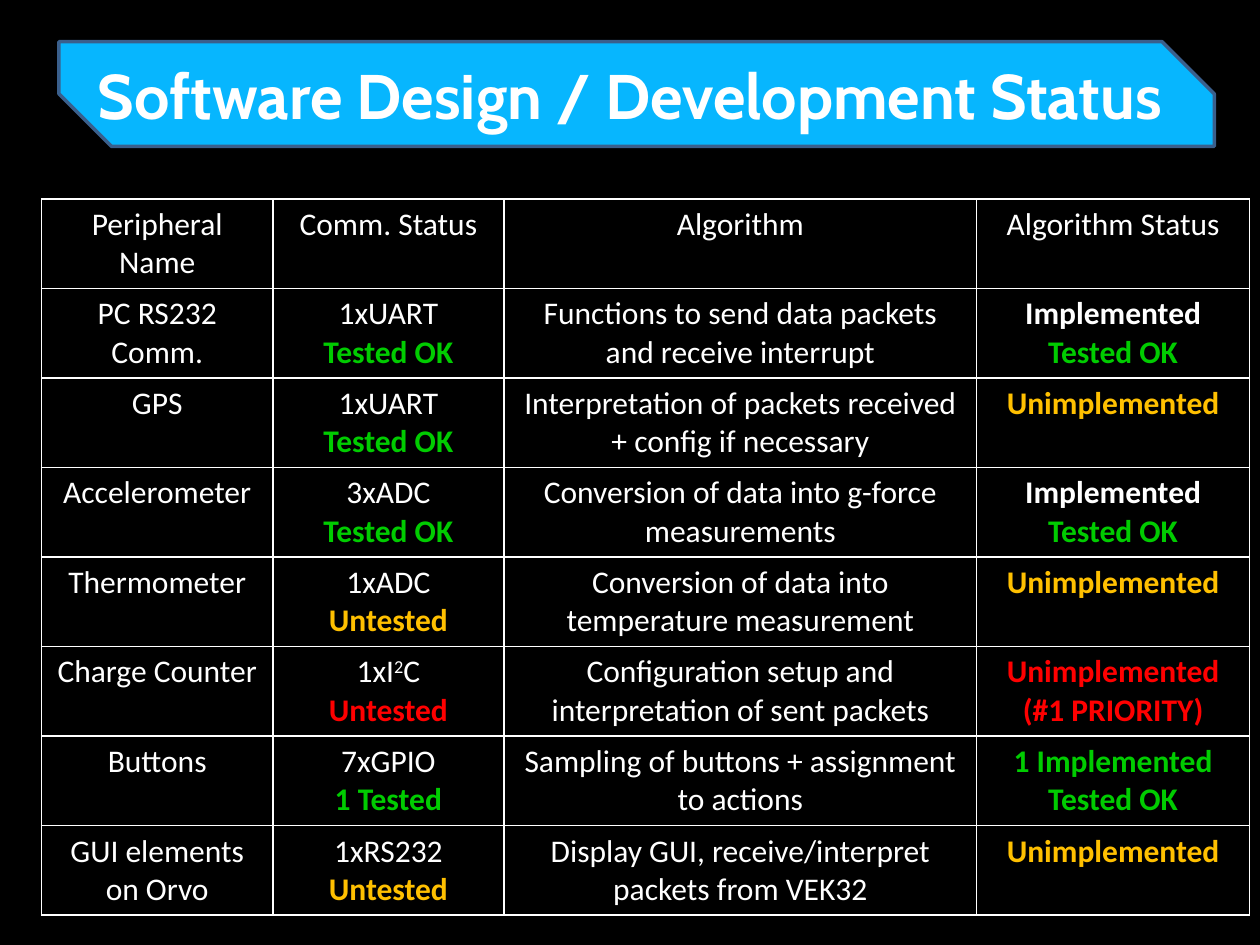
from typing import NamedTuple

from pptx import Presentation
from pptx.dml.color import RGBColor
from pptx.enum.shapes import MSO_SHAPE
from pptx.enum.text import MSO_ANCHOR, MSO_AUTO_SIZE, PP_ALIGN
from pptx.oxml import parse_xml
from pptx.oxml.ns import nsdecls
from pptx.slide import Slide
from pptx.table import Table, _Cell
from pptx.util import Cm, Pt

BLACK = RGBColor(0x00, 0x00, 0x00)
WHITE = RGBColor(0xFF, 0xFF, 0xFF)
SKY = RGBColor(0x07, 0xB6, 0xFE)
NAVY = RGBColor(0x3A, 0x5F, 0x8C)
GREEN = RGBColor(0x00, 0xCC, 0x00)
AMBER = RGBColor(0xFF, 0xC0, 0x00)
RED = RGBColor(0xFF, 0x00, 0x00)

BANNER = (Cm(1.19), Cm(0.84), Cm(23.29), Cm(2.11))
COLUMN_WIDTHS = (Cm(4.66), Cm(4.66), Cm(9.53), Cm(5.5))
ROW_HEIGHT = Cm(1.8)


class Line(NamedTuple):
    text: str
    color: RGBColor = WHITE
    bold: bool = False


class Peripheral(NamedTuple):
    name: str
    comm: str
    comm_status: Line
    algorithm: str
    algorithm_status: tuple[Line, ...]


HEADINGS = ("Peripheral Name", "Comm. Status", "Algorithm", "Algorithm Status")
TESTED = Line("Tested OK", GREEN, True)
UNTESTED = Line("Untested", AMBER, True)
IMPLEMENTED = (Line("Implemented", WHITE, True), TESTED)
UNIMPLEMENTED = (Line("Unimplemented", AMBER, True),)
TOP_PRIORITY = (Line("Unimplemented", RED, True), Line("(#1 PRIORITY)", RED, True))

PERIPHERALS = (
    Peripheral("PC RS232 Comm.", "1xUART", TESTED,
               "Functions to send data packets and receive interrupt", IMPLEMENTED),
    Peripheral("GPS", "1xUART", TESTED,
               "Interpretation of packets received + config if necessary", UNIMPLEMENTED),
    Peripheral("Accelerometer", "3xADC", TESTED,
               "Conversion of data into g-force measurements", IMPLEMENTED),
    Peripheral("Thermometer", "1xADC", UNTESTED,
               "Conversion of data into temperature measurement", UNIMPLEMENTED),
    Peripheral("Charge Counter", "1xI^2^C", Line("Untested", RED, True),
               "Configuration setup and interpretation of sent packets", TOP_PRIORITY),
    Peripheral("Buttons", "7xGPIO", Line("1 Tested", GREEN, True),
               "Sampling of buttons + assignment to actions",
               (Line("1 Implemented", GREEN, True), TESTED)),
    Peripheral("GUI elements on Orvo", "1xRS232", UNTESTED,
               "Display GUI, receive/interpret packets from VEK32", UNIMPLEMENTED),
)


def draw_title(page: Slide, text: str) -> None:
    banner = page.shapes.add_shape(MSO_SHAPE.SNIP_2_DIAG_RECTANGLE, *BANNER)
    banner.adjustments[0], banner.adjustments[1] = 0, 0.5
    banner.shadow.inherit = False
    banner.fill.solid()
    banner.fill.fore_color.rgb = SKY
    banner.line.color.rgb = NAVY
    banner.line.width = Pt(2)

    title = page.shapes.title
    title.left, title.top, title.width, title.height = BANNER
    banner.element.addnext(title.element)  # title in front of its banner
    frame = title.text_frame
    frame.text = text
    frame.word_wrap = True
    frame.auto_size = MSO_AUTO_SIZE.NONE
    frame.vertical_anchor = MSO_ANCHOR.MIDDLE
    frame.margin_left, frame.margin_right = Cm(0.78), Cm(0.25)
    para = frame.paragraphs[0]
    para.alignment = PP_ALIGN.LEFT
    font = para.runs[0].font
    font.name, font.size, font.bold = "Cabin", Pt(36), True
    font.color.rgb = WHITE


def draw_borders(cell: _Cell) -> None:
    properties = cell._tc.get_or_add_tcPr()
    for position, side in enumerate(("lnL", "lnR", "lnT", "lnB")):
        properties.insert(position, parse_xml(
            f'<a:{side} {nsdecls("a")} w="{Pt(1)}"><a:solidFill>'
            f'<a:srgbClr val="{WHITE}"/></a:solidFill></a:{side}>'))


def fill_cell(cell: _Cell, lines: tuple[Line, ...]) -> None:
    """Write one paragraph per line; text between carets is superscript."""
    cell.fill.solid()
    cell.fill.fore_color.rgb = BLACK
    draw_borders(cell)
    cell.text_frame.text = "\n".join(line.text for line in lines)
    for para, line in zip(cell.text_frame.paragraphs, lines):
        para.alignment = PP_ALIGN.CENTER
        first, *others = line.text.split("^")
        para.text = first
        for part in others:
            para.add_run().text = part
        for index, span in enumerate(para.runs):
            font = span.font
            font.name, font.size, font.bold = "Calibri", Pt(18), line.bold
            font.color.rgb = line.color
            if index % 2:
                font._element.set("baseline", "30000")


def fill_row(table: Table, row: int, cells: tuple[tuple[Line, ...], ...]) -> None:
    table.rows[row].height = ROW_HEIGHT
    for column, lines in enumerate(cells):
        fill_cell(table.cell(row, column), lines)


def draw_status_table(page: Slide) -> None:
    rows = len(PERIPHERALS) + 1
    table = page.shapes.add_table(rows, len(HEADINGS), Cm(0.84), Cm(4.01),
                                  sum(COLUMN_WIDTHS), ROW_HEIGHT * rows).table
    for column, width in zip(table.columns, COLUMN_WIDTHS):
        column.width = width
    fill_row(table, 0, tuple((Line(heading),) for heading in HEADINGS))
    for row, item in enumerate(PERIPHERALS, start=1):
        fill_row(table, row, (
            (Line(item.name),),
            (Line(item.comm), item.comm_status),
            (Line(item.algorithm),),
            item.algorithm_status,
        ))


def main() -> None:
    deck = Presentation()
    deck.slide_width, deck.slide_height = Cm(25.4), Cm(19.05)
    page = deck.slides.add_slide(deck.slide_layouts[5])
    page.background.fill.solid()
    page.background.fill.fore_color.rgb = BLACK
    draw_title(page, "Software Design / Development Status")
    draw_status_table(page)
    deck.save("out.pptx")


if __name__ == "__main__":
    main()
